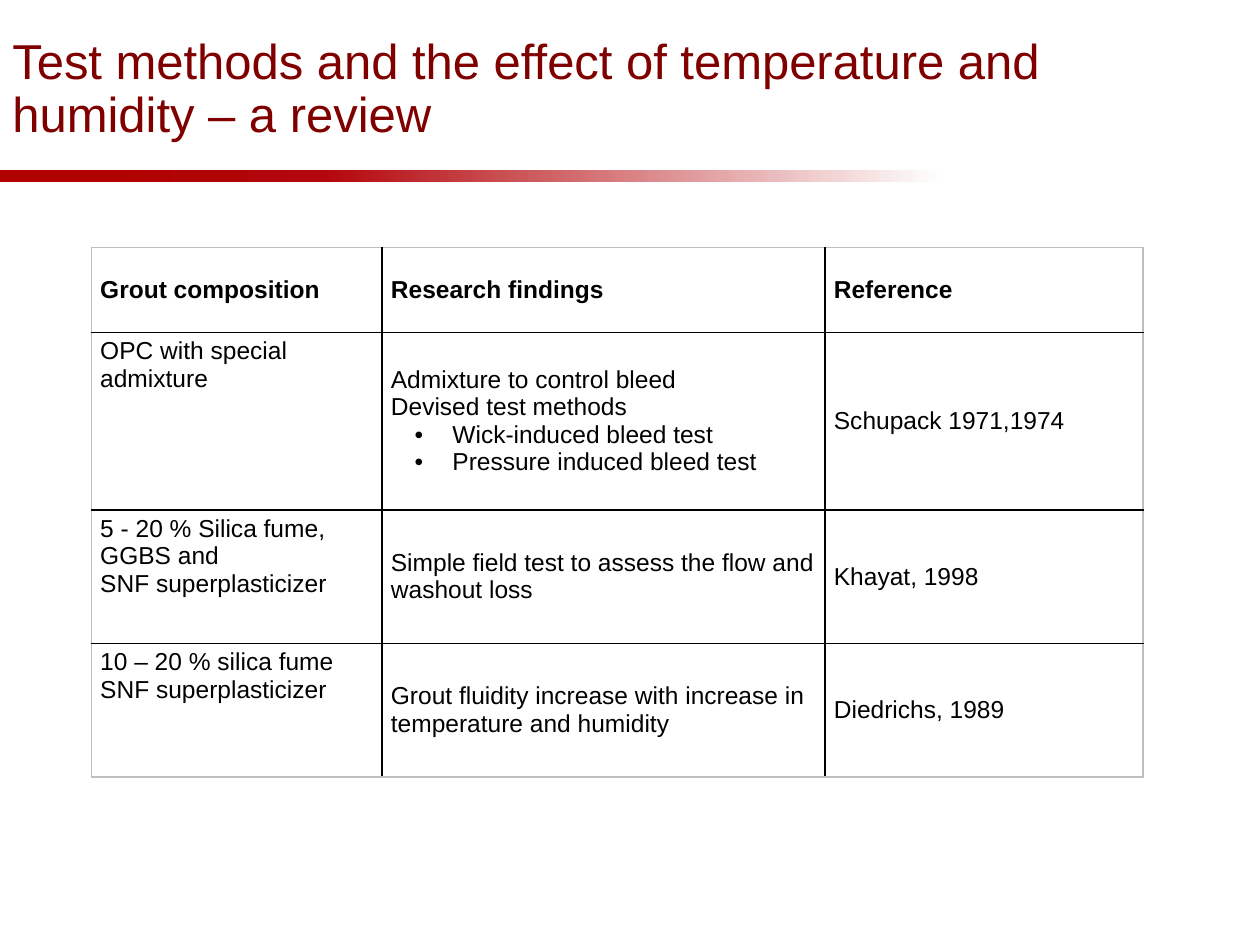
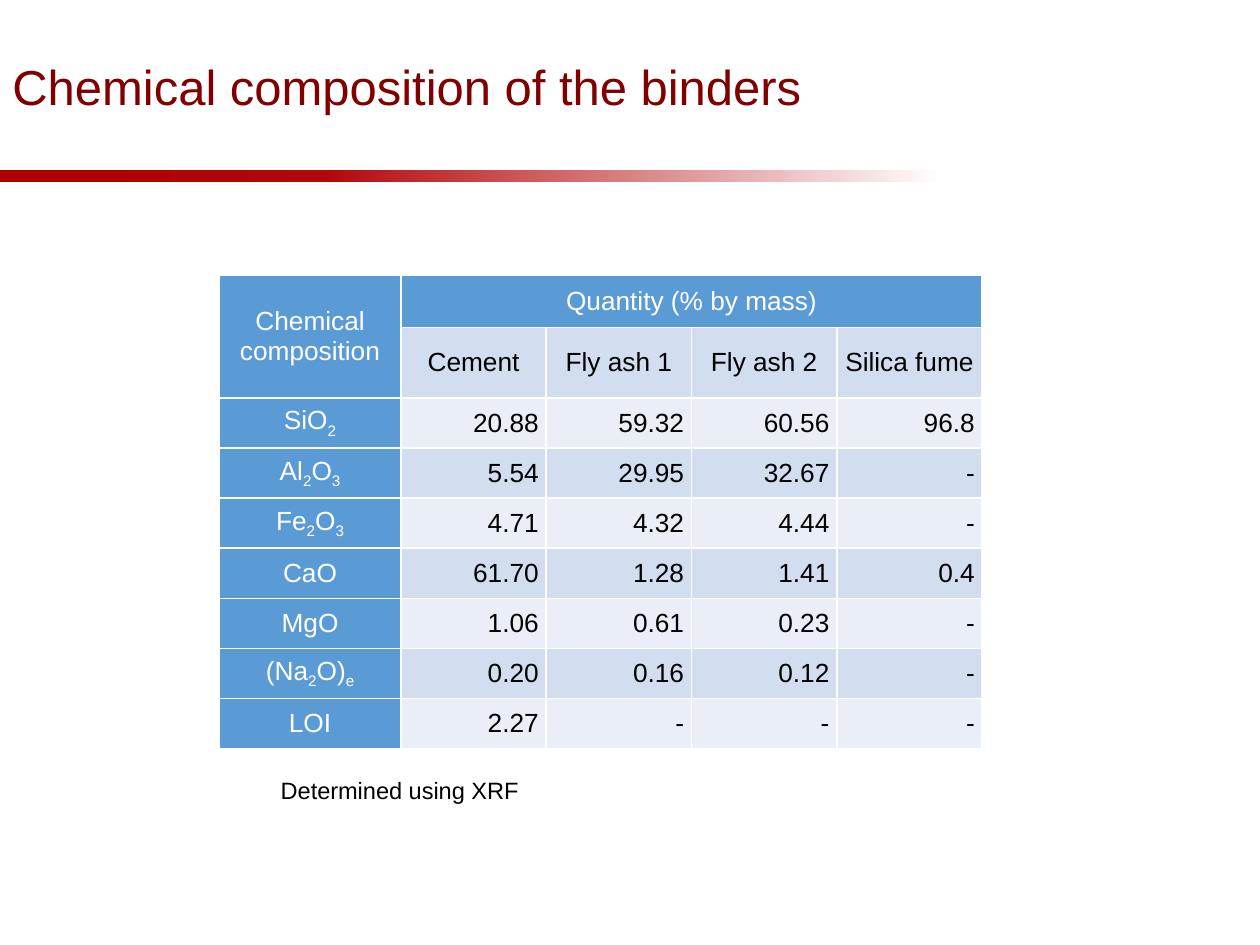
from lxml import etree
from pptx import Presentation
from pptx.dml.color import RGBColor
from pptx.enum.shapes import MSO_SHAPE
from pptx.enum.text import MSO_ANCHOR, PP_ALIGN
from pptx.oxml import parse_xml
from pptx.oxml.ns import nsdecls, qn
from pptx.util import Cm, Pt

RECT = MSO_SHAPE.RECTANGLE
TOP, MIDDLE = MSO_ANCHOR.TOP, MSO_ANCHOR.MIDDLE
LEFT, CENTER, RIGHT = PP_ALIGN.LEFT, PP_ALIGN.CENTER, PP_ALIGN.RIGHT

FONT = "Arial"
BLACK = RGBColor(0x00, 0x00, 0x00)
WHITE = RGBColor(0xFF, 0xFF, 0xFF)
GREY = RGBColor(0xBF, 0xBF, 0xBF)
MAROON = RGBColor(0x80, 0x00, 0x00)
RED = RGBColor(0xB0, 0x00, 0x00)
CRIMSON = RGBColor(0xB4, 0x07, 0x0C)
BLUE = RGBColor(0x5B, 0x9B, 0xD5)
MIST = RGBColor(0xD2, 0xDE, 0xEF)
PALE = RGBColor(0xEA, 0xEF, 0xF7)

FADE = [(0, RED), (8, RED), (26, CRIMSON), (75, WHITE), (100, WHITE)]

REVIEW = [
    ["Grout composition", "Research findings", "Reference"],
    ["OPC with special admixture",
     "Admixture to control bleed\nDevised test methods\n"
     "•Wick-induced bleed test\n•Pressure induced bleed test",
     "Schupack 1971,1974"],
    ["5 - 20 % Silica fume, GGBS and\nSNF superplasticizer",
     "Simple field test to assess the flow and washout loss",
     "Khayat, 1998"],
    ["10 – 20 % silica fume\nSNF superplasticizer",
     "Grout fluidity increase with increase in temperature and humidity",
     "Diedrichs, 1989"],
]

BINDERS = [
    ["Chemical composition", "Quantity (% by mass)", "", "", ""],
    ["", "Cement", "Fly ash 1", "Fly ash 2", "Silica fume"],
    ["SiO_2", "20.88", "59.32", "60.56", "96.8"],
    ["Al_2O_3", "5.54", "29.95", "32.67", "-"],
    ["Fe_2O_3", "4.71", "4.32", "4.44", "-"],
    ["CaO", "61.70", "1.28", "1.41", "0.4"],
    ["MgO", "1.06", "0.61", "0.23", "-"],
    ["(Na_2O)_e", "0.20", "0.16", "0.12", "-"],
    ["LOI", "2.27", "-", "-", "-"],
]


def add_run(para, text, low=False):
    """Add a run, lowered to a subscript if asked."""
    if text:
        run = para.add_run()
        run.text = text
        if low:
            run.font._element.set("baseline", "-25000")


def add_bullet(para):
    """Give a paragraph a hanging round bullet."""
    props = para._p.get_or_add_pPr()
    props.set("marL", str(Cm(1.24)))
    props.set("indent", str(Cm(-0.76)))
    etree.SubElement(props, qn("a:buFont")).set("typeface", FONT)
    etree.SubElement(props, qn("a:buChar")).set("char", "•")


def write(frame, text, size=14, color=BLACK, bold=False, align=LEFT, space=1.0):
    """Write lines of text; a leading • makes a bullet, _ lowers one letter."""
    for index, line in enumerate(text.split("\n")):
        para = frame.add_paragraph() if index else frame.paragraphs[0]
        if line.startswith("•"):
            add_bullet(para)
            line = line[1:]
        para.alignment = align
        para.line_spacing = space
        first, *rest = line.split("_")
        add_run(para, first)
        for part in rest:
            add_run(para, part[0], low=True)
            add_run(para, part[1:])
        for run in para.runs:
            font = run.font
            font.name, font.size, font.bold = FONT, Pt(size), bold
            font.color.rgb = color


def add_text(slide, text, left, top, width, height, anchor=TOP, **style):
    """Add a wrapped text box."""
    box = slide.shapes.add_textbox(Cm(left), Cm(top), Cm(width), Cm(height))
    frame = box.text_frame
    frame.word_wrap = True
    frame.vertical_anchor = anchor
    write(frame, text, **style)


def add_band(slide, left, width, height):
    """Add a band that fades from red to white."""
    band = slide.shapes.add_shape(
        RECT, Cm(left), Cm(3.43), Cm(width), Cm(height))
    band.shadow.inherit = False
    band.line.fill.background()
    stops = "".join(
        f'<a:gs pos="{pos * 1000}"><a:srgbClr val="{color}"/></a:gs>'
        for pos, color in FADE)
    fade = parse_xml(
        f'<a:gradFill {nsdecls("a")}><a:gsLst>{stops}</a:gsLst>'
        '<a:lin ang="0" scaled="0"/></a:gradFill>')
    band._element.spPr.find(qn("a:prstGeom")).addnext(fade)


def add_page(deck, title):
    """Add a slide with the shared bands and title."""
    slide = deck.slides.add_slide(deck.slide_layouts[6])
    add_band(slide, 0, 25.37, 0.25)
    add_band(slide, -0.08, 25.43, 0.23)
    add_text(slide, title, 0, -0.03, 21.9, 3.68, anchor=MIDDLE,
             size=28, color=MAROON, space=0.9)
    return slide


def add_grid(slide, left, top, cols, rows):
    """Add a plain table with the given column widths and row heights."""
    frame = slide.shapes.add_table(
        len(rows), len(cols), Cm(left), Cm(top), Cm(sum(cols)), Cm(sum(rows)))
    grid = frame.table
    grid.first_row = grid.horz_banding = False
    for col, width in zip(grid.columns, cols):
        col.width = Cm(width)
    for row, height in zip(grid.rows, rows):
        row.height = Cm(height)
    return grid


def set_edges(cell, colors):
    """Draw the left, right, top and bottom edges of a cell."""
    props = cell._tc.get_or_add_tcPr()
    for side, color in zip("LRTB", colors):
        props.append(parse_xml(
            f'<a:ln{side} {nsdecls("a")} w="{Pt(1)}"><a:solidFill>'
            f'<a:srgbClr val="{color}"/></a:solidFill></a:ln{side}>'))


def fill_cell(cell, text, edges, fill=None, pad=(0.18, 0.1),
              anchor=MIDDLE, **style):
    """Set the edges, fill, margins and text of a cell."""
    set_edges(cell, edges)
    if fill is None:
        cell.fill.background()
    else:
        cell.fill.solid()
        cell.fill.fore_color.rgb = fill
    cell.margin_left = cell.margin_right = Cm(pad[0])
    cell.margin_top = cell.margin_bottom = Cm(pad[1])
    cell.vertical_anchor = anchor
    if text:
        write(cell.text_frame, text, **style)


def add_review(slide):
    """Add the table of research findings."""
    grid = add_grid(slide, 1.84, 4.99, [5.86, 8.93, 6.41],
                    [1.71, 3.58, 2.69, 2.69])
    for r, row in enumerate(REVIEW):
        for c, text in enumerate(row):
            outer = (c == 0, c == len(row) - 1, r == 0, r == len(REVIEW) - 1)
            edges = [GREY if out else BLACK for out in outer]
            anchor = TOP if r and c == 0 else MIDDLE
            fill_cell(grid.cell(r, c), text, edges, anchor=anchor, bold=r == 0)


def add_binders(slide):
    """Add the table of binder composition."""
    grid = add_grid(slide, 4.42, 5.54, [3.66] + [2.93] * 4,
                    [1.06, 1.42] + [1.01] * 7)
    grid.cell(0, 0).merge(grid.cell(1, 0))
    grid.cell(0, 1).merge(grid.cell(0, 4))
    for r, row in enumerate(BINDERS):
        for c, text in enumerate(row):
            head = r == 0 or c == 0
            fill = BLUE if head else MIST if r % 2 else PALE
            fill_cell(grid.cell(r, c), text, [WHITE] * 4, fill=fill,
                      pad=(0.15, 0), size=15, color=WHITE if head else BLACK,
                      align=CENTER if head or r == 1 else RIGHT)


def main():
    """Build and save the deck."""
    deck = Presentation()
    deck.slide_width, deck.slide_height = Cm(25.4), Cm(19.05)
    add_review(add_page(
        deck, "Test methods and the effect of temperature and humidity – a review"))
    slide = add_page(deck, "Chemical composition of the binders")
    add_binders(slide)
    add_text(slide, "Determined using XRF", 5.41, 15.52, 7, 0.84, size=13.5)
    deck.save("out.pptx")


if __name__ == "__main__":
    main()
